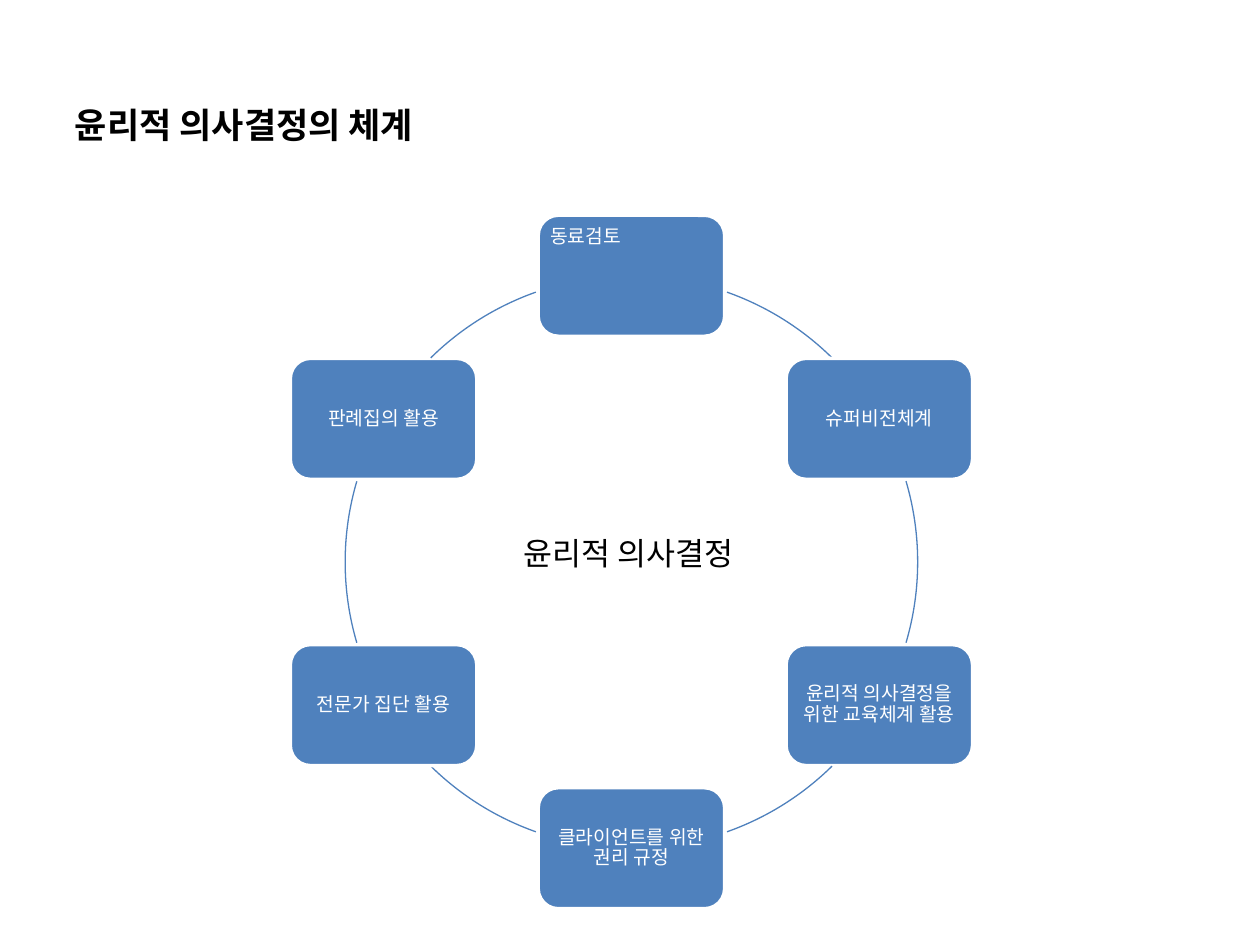
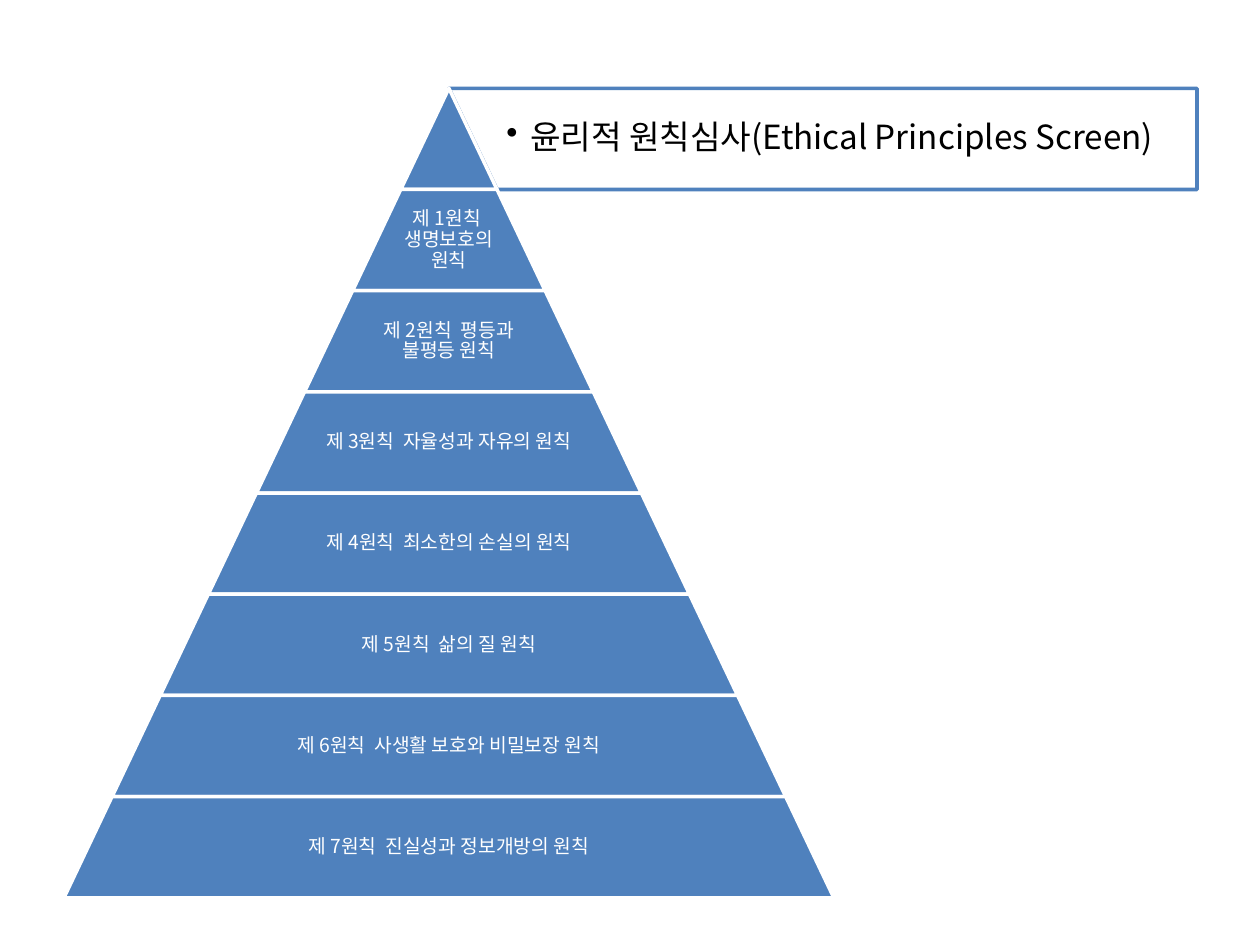
from math import cos, radians, sin

from lxml.etree import SubElement
from pptx import Presentation
from pptx.dml.color import RGBColor
from pptx.enum.shapes import MSO_SHAPE
from pptx.enum.text import MSO_ANCHOR, PP_ALIGN
from pptx.oxml.ns import qn
from pptx.util import Cm, Pt

COLORS = {"blue": "4F81BD", "white": "FFFFFF", "black": "000000"}
FONT = "Noto Sans CJK KR"
LABEL_SIZE = 11

SUPPORTS = [
    "동료검토",
    "슈퍼비전체계",
    "윤리적 의사결정을 위한 교육체계 활용",
    "클라이언트를 위한 권리 규정",
    "전문가 집단 활용",
    "판례집의 활용",
]
RING_X, RING_Y, RING_RADIUS = 12.73, 11.33, 5.77
SUPPORT_WIDTH, SUPPORT_HEIGHT = 3.76, 2.44
# Middle angle and half sweep of each visible arc, in degrees clockwise from the right
ARCS = [(302, 12.5), (0, 16.4), (58, 12.5), (122, 12.5), (180, 16.4), (238, 12.5)]

PRINCIPLES = [
    "",
    "제 1원칙  생명보호의 원칙",
    "제 2원칙  평등과 불평등 원칙",
    "제 3원칙  자율성과 자유의 원칙",
    "제 4원칙  최소한의 손실의 원칙",
    "제 5원칙  삶의 질 원칙",
    "제 6원칙  사생활 보호와 비밀보장 원칙",
    "제 7원칙  진실성과 정보개방의 원칙",
]
APEX_X, APEX_Y = 9.05, 1.78
LAYER_GROWTH, LAYER_HEIGHT = 1.94, 2.04
SCREEN_RIGHT = 24.13


def rgb(name):
    return RGBColor.from_string(COLORS[name])


def write(shape, text, size=LABEL_SIZE, color="white", align=PP_ALIGN.CENTER,
          anchor=MSO_ANCHOR.MIDDLE, margin=0.12, bold=False, spacing=0.9):
    frame = shape.text_frame
    frame.word_wrap = True
    frame.vertical_anchor = anchor
    frame.margin_left = frame.margin_right = Cm(margin)
    frame.margin_top = frame.margin_bottom = Cm(margin)
    paragraph = frame.paragraphs[0]
    paragraph.text = text
    paragraph.alignment = align
    paragraph.line_spacing = spacing
    font = paragraph.font
    font.name, font.size, font.bold = FONT, Pt(size), bold
    font.color.rgb = rgb(color)
    defaults = paragraph._p.pPr.find(qn("a:defRPr"))
    SubElement(defaults, qn("a:ea")).set("typeface", FONT)
    return paragraph


def add_label(slide, left, top, width, height, text, **style):
    box = slide.shapes.add_textbox(Cm(left), Cm(top), Cm(width), Cm(height))
    return box, write(box, text, **style)


def add_block(slide, preset, left, top, width, height, fill="blue", line="white", weight=2):
    block = slide.shapes.add_shape(preset, Cm(left), Cm(top), Cm(width), Cm(height))
    block.shadow.inherit = False
    if fill:
        block.fill.solid()
        block.fill.fore_color.rgb = rgb(fill)
    else:
        block.fill.background()
    block.line.color.rgb = rgb(line)
    block.line.width = Pt(weight)
    return block


def add_bullet(paragraph, indent):
    properties = paragraph._p.pPr
    properties.set("marL", str(Cm(indent)))
    properties.set("indent", str(-Cm(indent)))
    bullet = properties.makeelement(qn("a:buChar"), {"char": "•"})
    properties.find(qn("a:defRPr")).addprevious(bullet)


def add_title(slide, text):
    title, _ = add_label(slide, 1.09, 1.32, 22.86, 3.18, text, size=20, color="black",
                         align=PP_ALIGN.LEFT, bold=True, spacing=1.0)
    title.text_frame.margin_left = Cm(0.42)
    title.text_frame.margin_bottom = Cm(0.94)


def add_support(slide, index, text):
    angle = radians(60 * index - 90)
    left = RING_X + RING_RADIUS * cos(angle) - SUPPORT_WIDTH / 2
    top = RING_Y + RING_RADIUS * sin(angle) - SUPPORT_HEIGHT / 2
    support = add_block(slide, MSO_SHAPE.ROUNDED_RECTANGLE, left, top,
                        SUPPORT_WIDTH, SUPPORT_HEIGHT)
    if index == 0:
        write(support, text, align=PP_ALIGN.LEFT, anchor=MSO_ANCHOR.TOP)
    else:
        write(support, text)


def add_arc(slide, middle, half_sweep):
    arc = add_block(slide, MSO_SHAPE.ARC, RING_X - RING_RADIUS, RING_Y - RING_RADIUS,
                    2 * RING_RADIUS, 2 * RING_RADIUS, fill=None, line="blue", weight=0.75)
    # Angles are stored in 1/60000 degree, adjustments in 1/100000
    for i, angle in enumerate((middle - half_sweep, middle + half_sweep)):
        arc.adjustments[i] = angle % 360 * 0.6


def add_screen(slide, text):
    """Draw the callout whose slanted left edge follows the pyramid's tip."""
    screen = add_block(slide, MSO_SHAPE.NON_ISOSCELES_TRAPEZOID, APEX_X, APEX_Y,
                       SCREEN_RIGHT - APEX_X, LAYER_HEIGHT, fill="white", line="blue")
    screen.rotation = 180
    screen.adjustments[0] = 0
    screen.adjustments[1] = LAYER_GROWTH / 2 / LAYER_HEIGHT
    left = APEX_X + LAYER_GROWTH / 2
    _, paragraph = add_label(slide, left, APEX_Y, SCREEN_RIGHT - left, LAYER_HEIGHT, text,
                             size=19, color="black", align=PP_ALIGN.LEFT, margin=0.19)
    add_bullet(paragraph, 0.48)


def add_layer(slide, index, text):
    width = LAYER_GROWTH * (index + 1)
    top = APEX_Y + LAYER_HEIGHT * index
    layer = add_block(slide, MSO_SHAPE.TRAPEZOID, APEX_X - width / 2, top, width, LAYER_HEIGHT)
    layer.adjustments[0] = LAYER_GROWTH / 2 / min(width, LAYER_HEIGHT)
    if text:
        text_width = 0.65 * width
        add_label(slide, APEX_X - text_width / 2, top, text_width, LAYER_HEIGHT, text,
                  margin=0.04)


def build_system_slide(slide):
    add_title(slide, "윤리적 의사결정의 체계")
    for index, (support, arc) in enumerate(zip(SUPPORTS, ARCS)):
        add_support(slide, index, support)
        add_arc(slide, *arc)
    add_label(slide, 10.31, 10.52, 5.41, 1.02, "윤리적 의사결정", size=18, color="black",
              align=PP_ALIGN.LEFT, anchor=MSO_ANCHOR.TOP, margin=0.25, spacing=1.0)


def build_principles_slide(slide):
    add_screen(slide, "윤리적 원칙심사(Ethical Principles Screen)")
    for index, principle in enumerate(PRINCIPLES):
        add_layer(slide, index, principle)


def main():
    deck = Presentation()
    deck.slide_width, deck.slide_height = Cm(25.4), Cm(19.05)
    blank = deck.slide_layouts[6]
    for build in (build_system_slide, build_principles_slide):
        build(deck.slides.add_slide(blank))
    deck.save("out.pptx")


if __name__ == "__main__":
    main()
